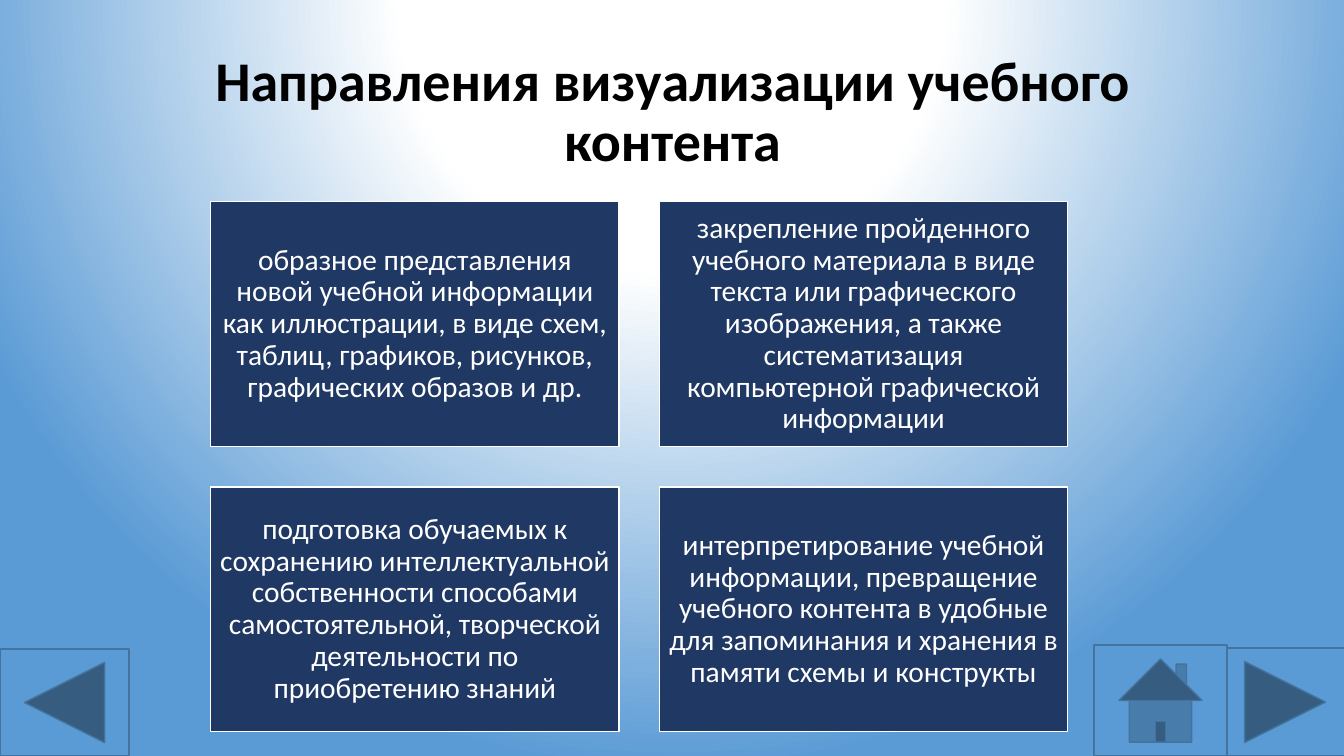
"""Build a slide on directions of visualising learning content."""
from lxml import etree
from pptx import Presentation
from pptx.dml.color import RGBColor
from pptx.enum.shapes import MSO_SHAPE
from pptx.enum.text import MSO_ANCHOR, MSO_AUTO_SIZE, PP_ALIGN
from pptx.oxml.ns import qn
from pptx.util import Inches, Pt

RECTANGLE = MSO_SHAPE.RECTANGLE
NEXT = MSO_SHAPE.ACTION_BUTTON_FORWARD_OR_NEXT
BACK = MSO_SHAPE.ACTION_BUTTON_BACK_OR_PREVIOUS
HOME = MSO_SHAPE.ACTION_BUTTON_HOME
CENTER = PP_ALIGN.CENTER
MIDDLE = MSO_ANCHOR.MIDDLE
NO_FIT = MSO_AUTO_SIZE.NONE

COLORS = {
    "black": "000000",
    "white": "FFFFFF",
    "navy": "203864",
    "blue": "5B9BD5",
    "outline": "43739E",
}
FONT = "Calibri"
TITLE = "Направления визуализации учебного контента"
DIRECTIONS = [
    "образное представления новой учебной информации как иллюстрации, "
    "в виде схем, таблиц, графиков, рисунков, графических образов и др.",
    "закрепление пройденного учебного материала в виде текста или "
    "графического изображения, а также систематизация компьютерной "
    "графической информации",
    "подготовка обучаемых к сохранению интеллектуальной собственности "
    "способами самостоятельной, творческой деятельности по приобретению знаний",
    "интерпретирование учебной информации, превращение учебного контента "
    "в удобные для запоминания и хранения в памяти схемы и конструкты",
]
BUTTONS = [
    (NEXT, 12.15, 6.43, 1.19, 1.07),
    (BACK, 0, 6.44, 1.28, 1.06),
    (HOME, 10.85, 6.4, 1.32, 1.1),
]
BACKGROUND_STOPS = [(0, "white"), (35, "white"), (100, "blue")]
BACKGROUND_FOCUS = {"l": 50, "t": -80, "r": 50, "b": 180}

GRID_LEFT, GRID_TOP = 2.09, 2
CARD_WIDTH, CARD_HEIGHT = 4.05, 2.43
GAP = 0.4
COLUMNS = 2


def rgb(color):
    """Return the named colour."""
    return RGBColor.from_string(COLORS[color])


def paint_background(slide):
    """Fill the slide with a radial gradient."""
    slide.background.fill.gradient()
    gradient = slide.element.find(".//" + qn("a:gradFill"))
    for child in list(gradient):
        gradient.remove(child)
    stops = etree.SubElement(gradient, qn("a:gsLst"))
    for position, color in BACKGROUND_STOPS:
        stop = etree.SubElement(stops, qn("a:gs"), pos=str(position * 1000))
        etree.SubElement(stop, qn("a:srgbClr"), val=COLORS[color])
    radial = etree.SubElement(gradient, qn("a:path"), path="circle")
    focus = {side: str(percent * 1000) for side, percent in BACKGROUND_FOCUS.items()}
    etree.SubElement(radial, qn("a:fillToRect"), focus)


def write(shape, text, size, color, bold=False, inset=0.1):
    """Put centred, formatted text into a shape."""
    frame = shape.text_frame
    frame.word_wrap = True
    frame.auto_size = NO_FIT
    frame.vertical_anchor = MIDDLE
    frame.margin_left = frame.margin_right = Inches(inset)
    frame.margin_top = frame.margin_bottom = Inches(min(inset, 0.09))
    paragraph = frame.paragraphs[0]
    paragraph.alignment = CENTER
    paragraph.line_spacing = 0.9
    run = paragraph.add_run()
    run.text = text
    run.font.name = FONT
    run.font.size = Pt(size)
    run.font.bold = bold
    run.font.color.rgb = rgb(color)


def add_block(slide, preset, left, top, width, height, fill, line):
    """Add a flat filled preset shape."""
    block = slide.shapes.add_shape(
        preset, Inches(left), Inches(top), Inches(width), Inches(height)
    )
    block.shadow.inherit = False
    block.fill.solid()
    block.fill.fore_color.rgb = rgb(fill)
    block.line.color.rgb = rgb(line)
    block.line.width = Pt(1)
    return block


def main():
    """Compose and save the slide."""
    deck = Presentation()
    deck.slide_width, deck.slide_height = Inches(13.33), Inches(7.5)
    slide = deck.slides.add_slide(deck.slide_layouts[5])
    paint_background(slide)

    heading = slide.shapes.title
    heading.left, heading.top = Inches(0.92), Inches(0.4)
    heading.width, heading.height = Inches(11.5), Inches(1.45)
    write(heading, TITLE, size=40, color="black", bold=True)

    for index, direction in enumerate(DIRECTIONS):
        row, column = divmod(index, COLUMNS)
        left = GRID_LEFT + column * (CARD_WIDTH + GAP)
        top = GRID_TOP + row * (CARD_HEIGHT + GAP)
        card = add_block(
            slide, RECTANGLE, left, top, CARD_WIDTH, CARD_HEIGHT, "navy", "white"
        )
        write(card, direction, size=21, color="white", inset=0.09)

    for preset, left, top, width, height in BUTTONS:
        add_block(slide, preset, left, top, width, height, "blue", "outline")

    deck.save("out.pptx")


if __name__ == "__main__":
    main()
